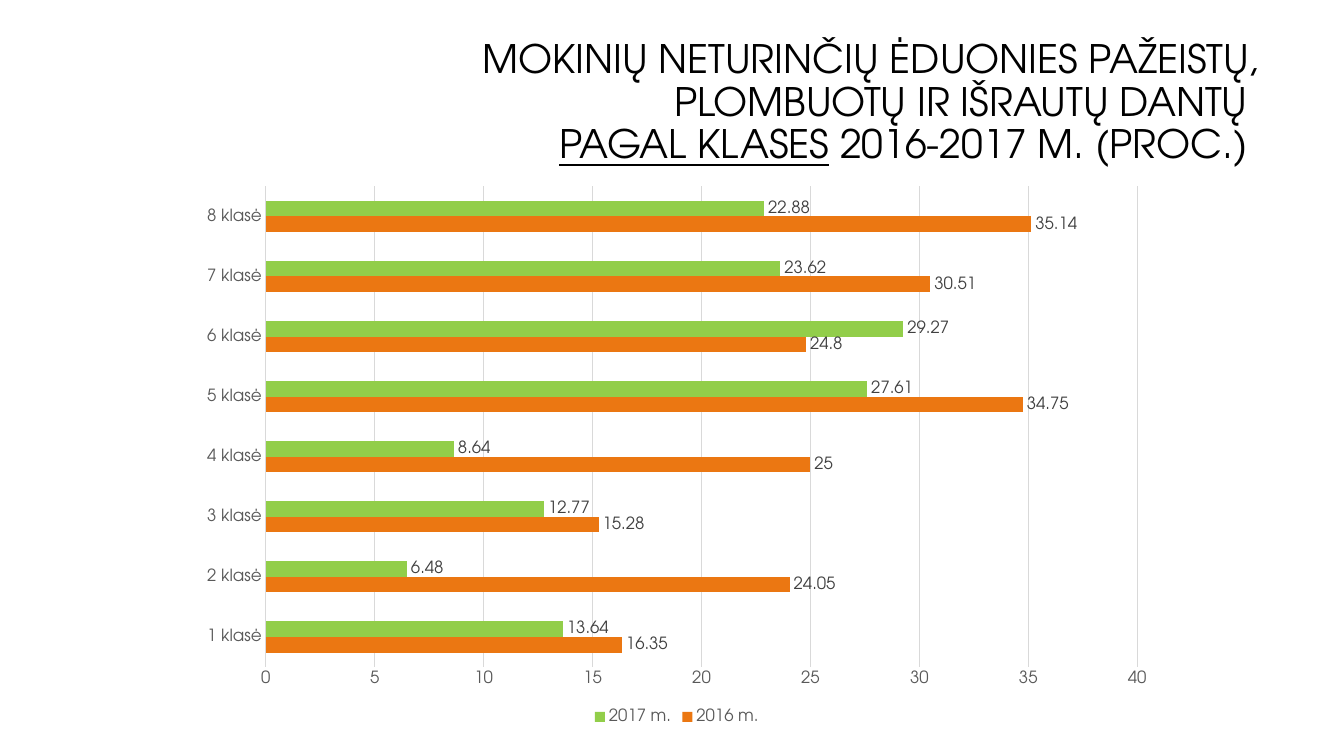
from dataclasses import dataclass

from pptx import Presentation
from pptx.chart.axis import _BaseAxis as Axis
from pptx.chart.chart import Chart
from pptx.chart.data import CategoryChartData
from pptx.chart.series import BarSeries
from pptx.dml.color import RGBColor
from pptx.enum.chart import XL_CHART_TYPE as ChartType
from pptx.enum.chart import XL_LABEL_POSITION as LabelPosition
from pptx.enum.chart import XL_LEGEND_POSITION as LegendPosition
from pptx.enum.chart import XL_TICK_MARK as TickMark
from pptx.enum.text import MSO_ANCHOR as Anchor
from pptx.enum.text import PP_ALIGN as Align
from pptx.slide import Slide
from pptx.text.text import Font, _Paragraph as Paragraph
from pptx.util import Pt

FONT = "TeX Gyre Adventor"
BLACK = RGBColor(0x00, 0x00, 0x00)
LABEL_GREY = RGBColor(0x40, 0x40, 0x40)
AXIS_GREY = RGBColor(0x59, 0x59, 0x59)
GRID_GREY = RGBColor(0xD9, 0xD9, 0xD9)
ORANGE = RGBColor(0xEB, 0x77, 0x12)
GREEN = RGBColor(0x92, 0xCE, 0x4A)


@dataclass(frozen=True)
class SchoolYear:
    name: str
    percentages: tuple[float, ...]
    color: RGBColor


CLASSES = [f"{number} klasė" for number in range(1, 9)]
YEARS = [
    SchoolYear("2016 m.", (16.35, 24.05, 15.28, 25, 34.75, 24.8, 30.51, 35.14), ORANGE),
    SchoolYear("2017 m.", (13.64, 6.48, 12.77, 8.64, 27.61, 29.27, 23.62, 22.88), GREEN),
]


def format_font(font: Font, size: float, color: RGBColor) -> None:
    font.name = FONT
    font.size = Pt(size)
    font.color.rgb = color


def add_text(paragraph: Paragraph, text: str, *, size: float = 28,
             color: RGBColor = BLACK, underline: bool = False) -> None:
    run = paragraph.add_run()
    run.text = text
    format_font(run.font, size, color)
    run.font.underline = underline


def add_heading(slide: Slide) -> None:
    heading = slide.shapes.add_textbox(Pt(228), Pt(22.3), Pt(678), Pt(103))
    frame = heading.text_frame
    frame.word_wrap = True
    frame.vertical_anchor = Anchor.MIDDLE
    paragraph = frame.paragraphs[0]
    paragraph.alignment = Align.RIGHT
    paragraph.line_spacing = 0.9
    add_text(paragraph, "MOKINIŲ NETURINČIŲ ĖDUONIES PAŽEISTŲ, PLOMBUOTŲ IR IŠRAUTŲ DANTŲ ")
    paragraph.add_line_break()
    add_text(paragraph, "PAGAL KLASES", underline=True)
    add_text(paragraph, " 2016-2017 M. (PROC.) ")


def style_axis(axis: Axis) -> None:
    axis.major_tick_mark = TickMark.NONE
    axis.minor_tick_mark = TickMark.NONE
    format_font(axis.tick_labels.font, 12, AXIS_GREY)


def style_axes(chart: Chart) -> None:
    class_axis, percent_axis = chart.category_axis, chart.value_axis
    style_axis(class_axis)
    style_axis(percent_axis)
    class_axis.has_major_gridlines = False
    percent_axis.has_major_gridlines = True
    percent_axis.minimum_scale = 0
    percent_axis.maximum_scale = 40
    percent_axis.major_unit = 5
    percent_axis.format.line.fill.background()
    for line in (class_axis.format.line, percent_axis.major_gridlines.format.line):
        line.color.rgb = GRID_GREY
        line.width = Pt(0.75)


def style_series(series: BarSeries, year: SchoolYear) -> None:
    series.format.fill.solid()
    series.format.fill.fore_color.rgb = year.color
    series.invert_if_negative = False
    labels = series.data_labels
    labels.show_value = True
    labels.position = LabelPosition.OUTSIDE_END
    format_font(labels.font, 12, LABEL_GREY)


def add_class_chart(slide: Slide) -> None:
    results = CategoryChartData()
    results.categories = CLASSES
    for year in YEARS:
        results.add_series(year.name, year.percentages)
    chart = slide.shapes.add_chart(
        ChartType.BAR_CLUSTERED, Pt(134), Pt(125.3), Pt(699), Pt(395.3), results
    ).chart
    format_font(chart.font, 10, BLACK)
    chart.has_title = False
    chart.has_legend = True
    chart.legend.position = LegendPosition.BOTTOM
    chart.legend.include_in_layout = False
    format_font(chart.legend.font, 12, AXIS_GREY)
    style_axes(chart)
    plot = chart.plots[0]
    plot.gap_width = 182
    plot.vary_by_categories = False
    for series, year in zip(plot.series, YEARS):
        style_series(series, year)


def main() -> None:
    presentation = Presentation()
    presentation.slide_width = Pt(960)
    presentation.slide_height = Pt(540)
    slide = presentation.slides.add_slide(presentation.slide_layouts[6])
    add_heading(slide)
    add_class_chart(slide)
    presentation.save("out.pptx")


if __name__ == "__main__":
    main()
